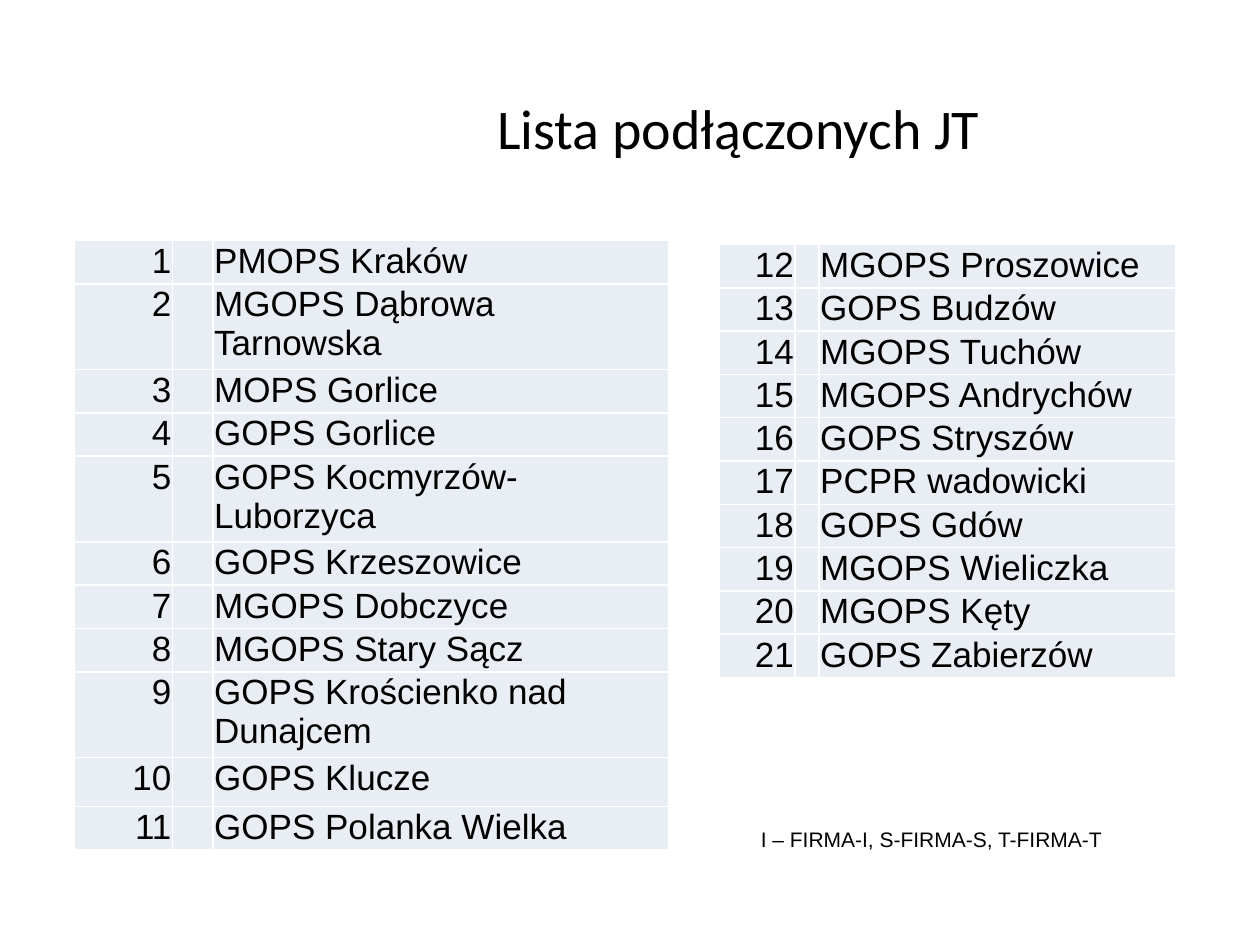
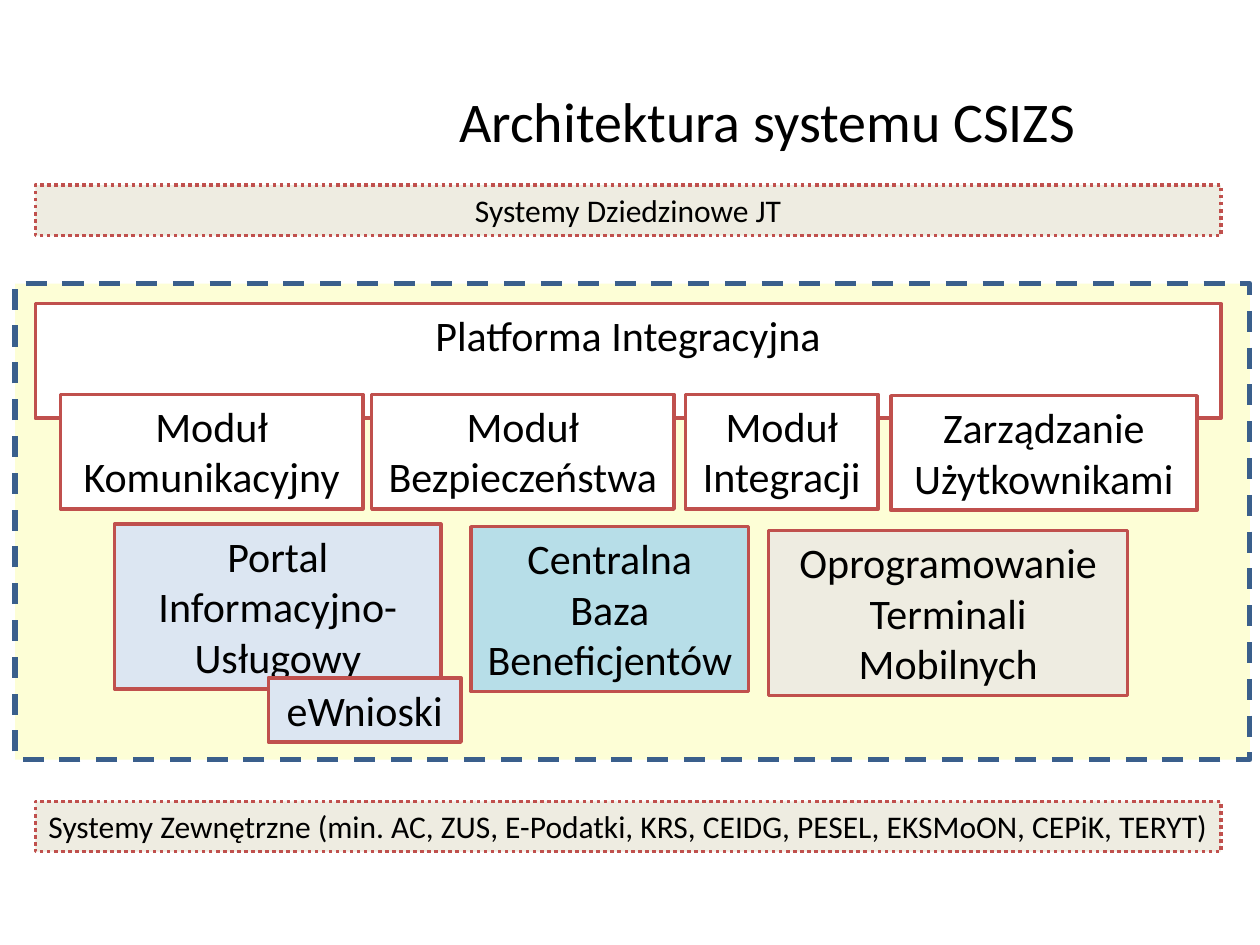
import pptx
import pptx.dml.color
import pptx.enum.dml
import pptx.enum.shapes
import pptx.enum.text
import pptx.oxml
import pptx.oxml.ns
import pptx.util

RGBColor = pptx.dml.color.RGBColor
ALIGN = pptx.enum.text.PP_ALIGN
ANCHOR = pptx.enum.text.MSO_ANCHOR
DASH = pptx.enum.dml.MSO_LINE.DASH
DOTS = pptx.enum.dml.MSO_LINE.ROUND_DOT
RECTANGLE = pptx.enum.shapes.MSO_SHAPE.RECTANGLE

BLACK = RGBColor(0x00, 0x00, 0x00)
WHITE = RGBColor(0xFF, 0xFF, 0xFF)
ROW_TINT = RGBColor(0xE9, 0xED, 0xF4)
CREAM = RGBColor(0xFD, 0xFE, 0xD6)
NAVY = RGBColor(0x3A, 0x5F, 0x8C)
RED = RGBColor(0xC0, 0x50, 0x4D)
PALE_BLUE = RGBColor(0xDC, 0xE6, 0xF2)
AQUA = RGBColor(0xB7, 0xDE, 0xE8)
SAND = RGBColor(0xEE, 0xEC, 0xE1)

PX = 9144
ROW_HEIGHT = 34


def write(frame, text, size, font="Calibri", align=ALIGN.CENTER):
    paragraph = frame.paragraphs[0]
    paragraph.alignment = align
    for number, line in enumerate(text.split("\n")):
        if number:
            paragraph.add_line_break()
        run = paragraph.add_run()
        run.text = line
        run.font.size = pptx.util.Pt(size)
        run.font.name = font
        run.font.color.rgb = BLACK


def add_block(slide, box, fill, border, weight, dash=None):
    block = slide.shapes.add_shape(RECTANGLE, *[side * PX for side in box])
    block.shadow.inherit = False
    block.fill.solid()
    block.fill.fore_color.rgb = fill
    block.line.color.rgb = border
    block.line.width = pptx.util.Pt(weight)
    if dash:
        block.line.dash_style = dash
    block.text_frame.vertical_anchor = ANCHOR.TOP
    return block.text_frame


presentation = pptx.Presentation()
presentation.slide_width = 1000 * PX
presentation.slide_height = 750 * PX
blank = presentation.slide_layouts[6]
units_slide = presentation.slides.add_slide(blank)
architecture_slide = presentation.slides.add_slide(blank)

platform_area = add_block(architecture_slide, (12, 225, 980, 378), CREAM, NAVY, 3, DASH)

for slide, title, box, indent in [
    (units_slide, "Lista podłączonych JT", (209, 38, 724, 125), 40),
    (architecture_slide, "Architektura systemu CSIZS", (248, 28, 702, 134), 30),
]:
    heading = slide.shapes.add_textbox(*[side * PX for side in box]).text_frame
    heading.word_wrap = True
    heading.vertical_anchor = ANCHOR.MIDDLE
    heading.margin_left = indent * PX
    write(heading, title, 32)

legend = units_slide.shapes.add_textbox(594 * PX, 651 * PX, 311 * PX, 30 * PX).text_frame
legend.word_wrap = False
write(legend, "I – FIRMA-I, S-FIRMA-S, T-FIRMA-T", 12, "Arial", ALIGN.LEFT)

first_units = [
    "PMOPS Kraków", "MGOPS Dąbrowa Tarnowska", "MOPS Gorlice", "GOPS Gorlice",
    "GOPS Kocmyrzów-Luborzyca", "GOPS Krzeszowice", "MGOPS Dobczyce",
    "MGOPS Stary Sącz", "GOPS Krościenko nad Dunajcem", "GOPS Klucze",
    "GOPS Polanka Wielka",
]
last_units = [
    "MGOPS Proszowice", "GOPS Budzów", "MGOPS Tuchów", "MGOPS Andrychów",
    "GOPS Stryszów", "PCPR wadowicki", "GOPS Gdów", "MGOPS Wieliczka",
    "MGOPS Kęty", "GOPS Zabierzów",
]
special_heights = {2: 68, 5: 68, 9: 68, 10: 39}

for units, start, left, top, widths in [
    (first_units, 1, 59, 191, (78, 32, 362)),
    (last_units, 12, 571, 194, (60, 19, 283)),
]:
    heights = [special_heights.get(start + i, ROW_HEIGHT) for i in range(len(units))]
    unit_table = units_slide.shapes.add_table(
        len(units), 3, left * PX, top * PX, sum(widths) * PX, sum(heights) * PX
    ).table
    unit_table.first_row = False
    unit_table.horz_banding = False
    for column, width in zip(unit_table.columns, widths):
        column.width = width * PX
    for i, unit in enumerate(units):
        unit_table.rows[i].height = heights[i] * PX
        for column, text in enumerate((str(start + i), "", unit)):
            cell = unit_table.cell(i, column)
            cell.margin_left = cell.margin_right = cell.margin_top = PX
            cell.margin_bottom = 0
            for edge in ("lnL", "lnR", "lnT", "lnB"):
                cell._tc.get_or_add_tcPr().append(pptx.oxml.parse_xml(
                    f'<a:{edge} {pptx.oxml.ns.nsdecls("a")} w="12700"><a:solidFill>'
                    f'<a:srgbClr val="{WHITE}"/></a:solidFill></a:{edge}>'
                ))
            cell.fill.solid()
            cell.fill.fore_color.rgb = ROW_TINT
            if text:
                align = ALIGN.LEFT if column else ALIGN.RIGHT
                write(cell.text_frame, text, 20, "Arial", align)

for name, top in [
    ("Systemy Dziedzinowe JT", 147),
    ("Systemy Zewnętrzne (min. AC, ZUS, E-Podatki, KRS, CEIDG, PESEL, EKSMoON, CEPiK, TERYT)", 636),
]:
    band = add_block(architecture_slide, (28, top, 941, 40), SAND, RED, 2, DOTS)
    band.word_wrap = False
    write(band, name, 18)

for name, box, fill in [
    ("Platforma Integracyjna", (28, 241, 941, 91), WHITE),
    ("Portal Informacyjno- Usługowy", (91, 416, 259, 131), PALE_BLUE),
    ("Centralna\nBaza Beneficjentów", (374, 418, 220, 131), AQUA),
    ("Oprogramowanie Terminali Mobilnych", (610, 421, 285, 131), SAND),
    ("Zarządzanie Użytkownikami", (707, 314, 243, 91), WHITE),
    ("Moduł Bezpieczeństwa", (295, 313, 240, 91), WHITE),
    ("Moduł Komunikacyjny", (48, 313, 240, 91), WHITE),
    ("Moduł Integracji", (544, 313, 153, 91), WHITE),
    ("eWnioski", (213, 538, 153, 51), PALE_BLUE),
]:
    module = add_block(architecture_slide, box, fill, RED, 2)
    module.word_wrap = True
    write(module, name, 24)

presentation.save("out.pptx")
